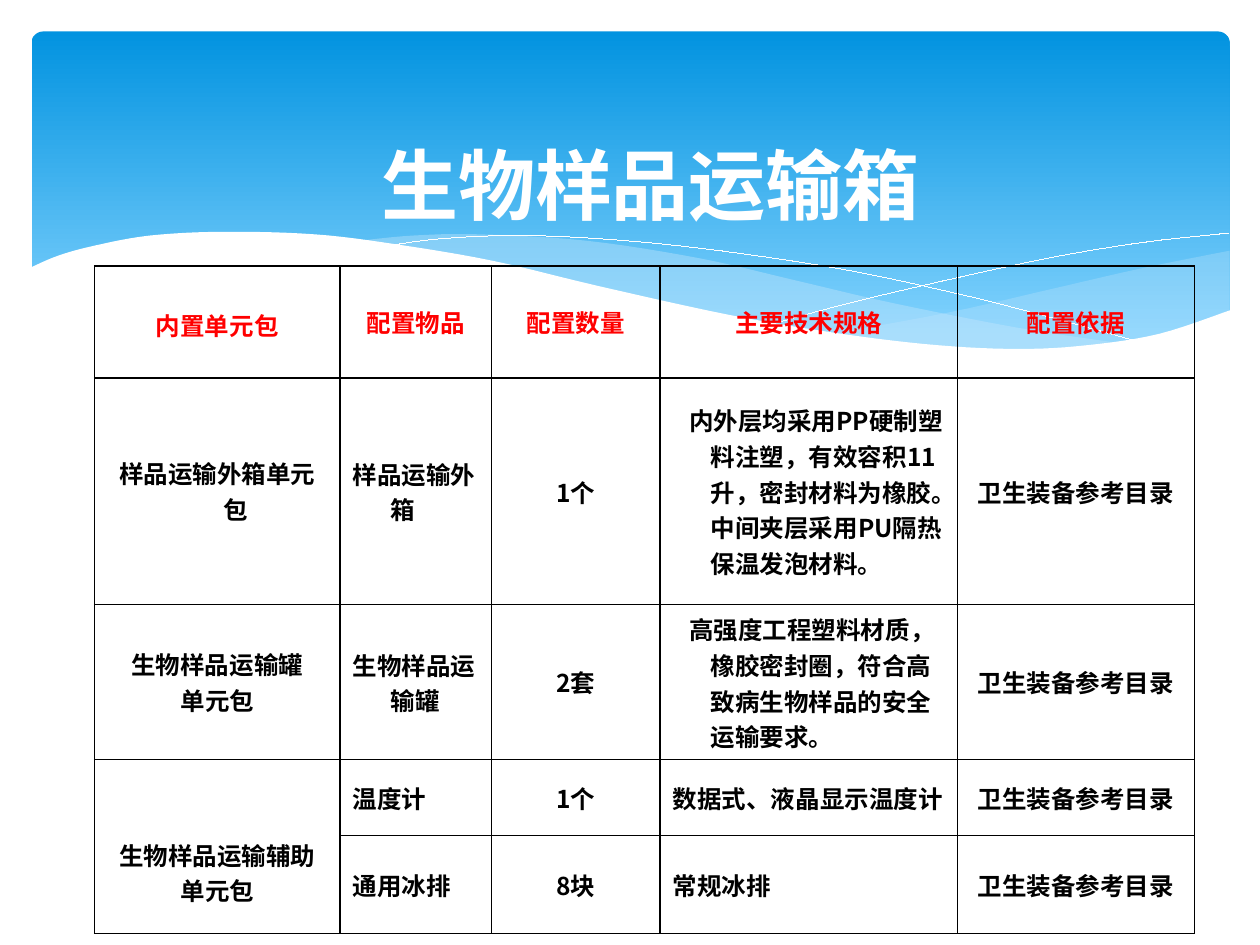
from dataclasses import dataclass

from lxml import etree
from pptx import Presentation
from pptx import util as u
from pptx.dml import color as dml
from pptx.enum import shapes, text
from pptx.oxml import ns

WIDTH, HEIGHT = u.Inches(10), u.Inches(7.5)
COLORS = {
    "sky": "0293E0", "horizon": "83D3FE", "mist": "C6E7FC",
    "white": "FFFFFF", "black": "000000", "header": "FF0000",
}
TITLE_FONT, TABLE_FONT = "Calibri", "Noto Sans CJK SC"
INDENT = 0.3
LINE_HEIGHT = 0.28
HAIRLINE = u.Pt(0.01)
BASIS = "卫生装备参考目录"
COLUMN_WIDTHS = [1.95, 1.2, 1.34, 2.36, 1.88]
ROW_HEIGHTS = [0.89, 1.8, 1.23, 0.6, 0.78]


@dataclass
class Wave:
    """Edges are smooth curves through points in percent of the slide's size."""
    edges: list[list[tuple[float, float]]]
    corners: tuple[tuple[float, float], ...] = ()
    fill: str | None = None
    opacity: int = 100


@dataclass
class Entry:
    lines: list[str]
    centered: bool = True
    color: str = "black"
    lines_down: int | None = None  # None centres the text vertically
    first_shift: float = 0


WAVES = [
    Wave([[(97.6, 26.53), (90.6, 28.4), (83.2, 30.67), (75.3, 33.07), (66.1, 35.33)],
          [(66.1, 35.33), (73.2, 36.53), (80.3, 37.07), (86.3, 36.67), (92.1, 35.33),
           (97.6, 32.93)]], fill="mist", opacity=29),
    Wave([[(89.3, 36.4), (80.7, 34.67), (70.6, 32), (62.9, 29.6), (55.5, 27.33),
           (46.5, 25.47), (38, 24.8), (32.8, 24.93), (28.6, 25.47)],
          [(28.6, 25.47), (36.2, 27.07), (44.9, 29.6), (56.6, 33.07), (65, 35.2),
           (73.6, 36.67), (80.7, 37.07), (85.7, 36.8), (89.3, 36.4)]],
         fill="mist", opacity=40),
    Wave([[(30.9, 26), (34.4, 25.33), (40.1, 24.93), (46.9, 25.2), (55.6, 26.27),
           (66.5, 28.4), (76, 31.07), (83.1, 33.47), (90.7, 36.27)]]),
    Wave([[(61.3, 34.27), (67.2, 32.13), (74.8, 29.73), (83.6, 27.2), (91, 25.6),
           (97.5, 24.67)]]),
    Wave([[(97.7, 32.8), (92, 35.33), (86.3, 36.53), (80.9, 36.93), (74.4, 36.53),
           (66.8, 35.33), (57.9, 33.33), (47.5, 30.27), (39.1, 27.6), (31.5, 25.87),
           (25, 24.8), (17.7, 24.53), (11.9, 24.93), (7.5, 26), (4.6, 27.07),
           (2.3, 28.4)]], corners=((2.3, 43.87), (97.7, 43.87)), fill="white"),
]


def item_row(unit: Entry | None, item: str, amount: str, details: str,
             shift: float = 0) -> list[Entry | None]:
    return [unit, Entry([item], centered=False), Entry([amount]),
            Entry([details], centered=False, first_shift=shift), Entry([BASIS])]


ROWS = [
    [Entry(["内置单元包"], color="header", lines_down=1)]
    + [Entry([name], color="header")
       for name in ("配置物品", "配置数量", "主要技术规格", "配置依据")],
    item_row(Entry(["样品运输外箱单元包"], lines_down=2), "样品运输外箱", "1个",
             "内外层均采用PP硬制塑料注塑，有效容积11升，密封材料为橡胶。"
             "中间夹层采用PU隔热保温发泡材料。", 0.13),
    item_row(Entry(["生物样品运输罐", "单元包"], lines_down=1), "生物样品运输罐", "2套",
             "高强度工程塑料材质，橡胶密封圈，符合高致病生物样品的安全运输要求。", 0.13),
    item_row(Entry(["生物样品运输辅助", "单元包"], lines_down=2), "温度计", "1个",
             "数据式、液晶显示温度计"),
    item_row(None, "通用冰排", "8块", "常规冰排"),
]


def rgb(name: str) -> dml.RGBColor:
    return dml.RGBColor.from_string(COLORS[name])


def smooth(points: list[tuple[float, float]], steps: int = 6) -> list[tuple[float, float]]:
    """Sample a Catmull-Rom curve through the points."""
    padded = [points[0], *points, points[-1]]
    curve = [points[0]]
    for a, b, c, d in zip(padded, padded[1:], padded[2:], padded[3:]):
        for step in range(1, steps + 1):
            t = step / steps
            curve.append(tuple(
                0.5 * (2 * q + (r - p) * t + (2 * p - 5 * q + 4 * r - s) * t ** 2
                       + (3 * q - p - 3 * r + s) * t ** 3)
                for p, q, r, s in zip(a, b, c, d)))
    return curve


def draw_banner(slide) -> None:
    shape = slide.shapes.add_shape(
        shapes.MSO_SHAPE.ROUNDED_RECTANGLE,
        u.Inches(0.25), u.Inches(0.25), u.Inches(9.51), u.Inches(2.7))
    shape.adjustments[0] = 0.034
    shape.shadow.inherit = False
    shape.line.fill.background()
    shape.fill.gradient()
    shape.fill.gradient_angle = 270
    for stop, position, name in zip(shape.fill.gradient_stops, (0, 0.9), ("sky", "horizon")):
        stop.position = position
        stop.color.rgb = rgb(name)


def draw_wave(slide, wave: Wave) -> None:
    outline = [point for edge in wave.edges for point in smooth(edge)] + list(wave.corners)
    points = [(round(x * WIDTH / 100), round(y * HEIGHT / 100)) for x, y in outline]
    builder = slide.shapes.build_freeform(*points[0])
    builder.add_line_segments(points[1:], close=wave.fill is not None)
    shape = builder.convert_to_shape()
    shape.shadow.inherit = False
    if wave.fill is None:
        shape.fill.background()
        shape.line.color.rgb = rgb("white")
        shape.line.width = HAIRLINE
        return
    shape.line.fill.background()
    shape.fill.solid()
    shape.fill.fore_color.rgb = rgb(wave.fill)
    if wave.opacity < 100:
        color = shape.fill._xPr.find(".//" + ns.qn("a:srgbClr"))
        etree.SubElement(color, ns.qn("a:alpha"), val=str(wave.opacity * 1000))


def write_run(paragraph, words: str, size: int, font_name: str, color: str) -> None:
    run = paragraph.add_run()
    run.text = words
    font = run.font
    font.size, font.bold, font.name = u.Pt(size), True, font_name
    font.color.rgb = rgb(color)
    etree.SubElement(run._r.get_or_add_rPr(), ns.qn("a:ea"), typeface=TABLE_FONT)


def draw_title(slide, words: str) -> None:
    box = slide.shapes.add_textbox(
        u.Inches(0.83), u.Inches(0.83), u.Inches(8.67), u.Inches(1.25))
    frame = box.text_frame
    frame.word_wrap = True
    frame.vertical_anchor = text.MSO_ANCHOR.MIDDLE
    frame.paragraphs[0].alignment = text.PP_ALIGN.CENTER
    write_run(frame.paragraphs[0], words, 44, TITLE_FONT, "white")


def style_cell(cell) -> None:
    """Clear the fill and give all four sides a black border."""
    cell.fill.background()
    properties = cell._tc.get_or_add_tcPr()
    for index, side in enumerate(("lnL", "lnR", "lnT", "lnB")):
        line = etree.Element(ns.qn("a:" + side), w=str(u.Pt(1)))
        fill = etree.SubElement(line, ns.qn("a:solidFill"))
        etree.SubElement(fill, ns.qn("a:srgbClr"), val=COLORS["black"])
        properties.insert(index, line)


def fill_cell(cell, entry: Entry) -> None:
    if entry.lines_down is None:
        cell.vertical_anchor = text.MSO_ANCHOR.MIDDLE
    else:
        cell.margin_top = u.Inches(0.05 + entry.lines_down * LINE_HEIGHT)
    frame = cell.text_frame
    for index, words in enumerate(entry.lines):
        paragraph = frame.add_paragraph() if index else frame.paragraphs[0]
        paragraph.alignment = text.PP_ALIGN.CENTER if entry.centered else text.PP_ALIGN.LEFT
        properties = paragraph._p.get_or_add_pPr()
        properties.set("marL", str(u.Inches(INDENT)))
        properties.set("indent", str(u.Inches(entry.first_shift - INDENT)))
        write_run(paragraph, words, 14, TABLE_FONT, entry.color)


def draw_table(slide) -> None:
    table = slide.shapes.add_table(
        len(ROWS), len(COLUMN_WIDTHS), u.Inches(0.75), u.Inches(2.11),
        u.Inches(sum(COLUMN_WIDTHS)), u.Inches(sum(ROW_HEIGHTS))).table
    table.first_row = table.horz_banding = False
    for column, width in zip(table.columns, COLUMN_WIDTHS):
        column.width = u.Inches(width)
    for row, height, entries in zip(table.rows, ROW_HEIGHTS, ROWS):
        row.height = u.Inches(height)
        for cell, entry in zip(row.cells, entries):
            style_cell(cell)
            if entry:
                fill_cell(cell, entry)
    table.cell(3, 0).merge(table.cell(4, 0))


def main() -> None:
    presentation = Presentation()
    presentation.slide_width, presentation.slide_height = WIDTH, HEIGHT
    slide = presentation.slides.add_slide(presentation.slide_layouts[6])
    draw_banner(slide)
    for wave in WAVES:
        draw_wave(slide, wave)
    draw_title(slide, "生物样品运输箱")
    draw_table(slide)
    presentation.save("out.pptx")


if __name__ == "__main__":
    main()
